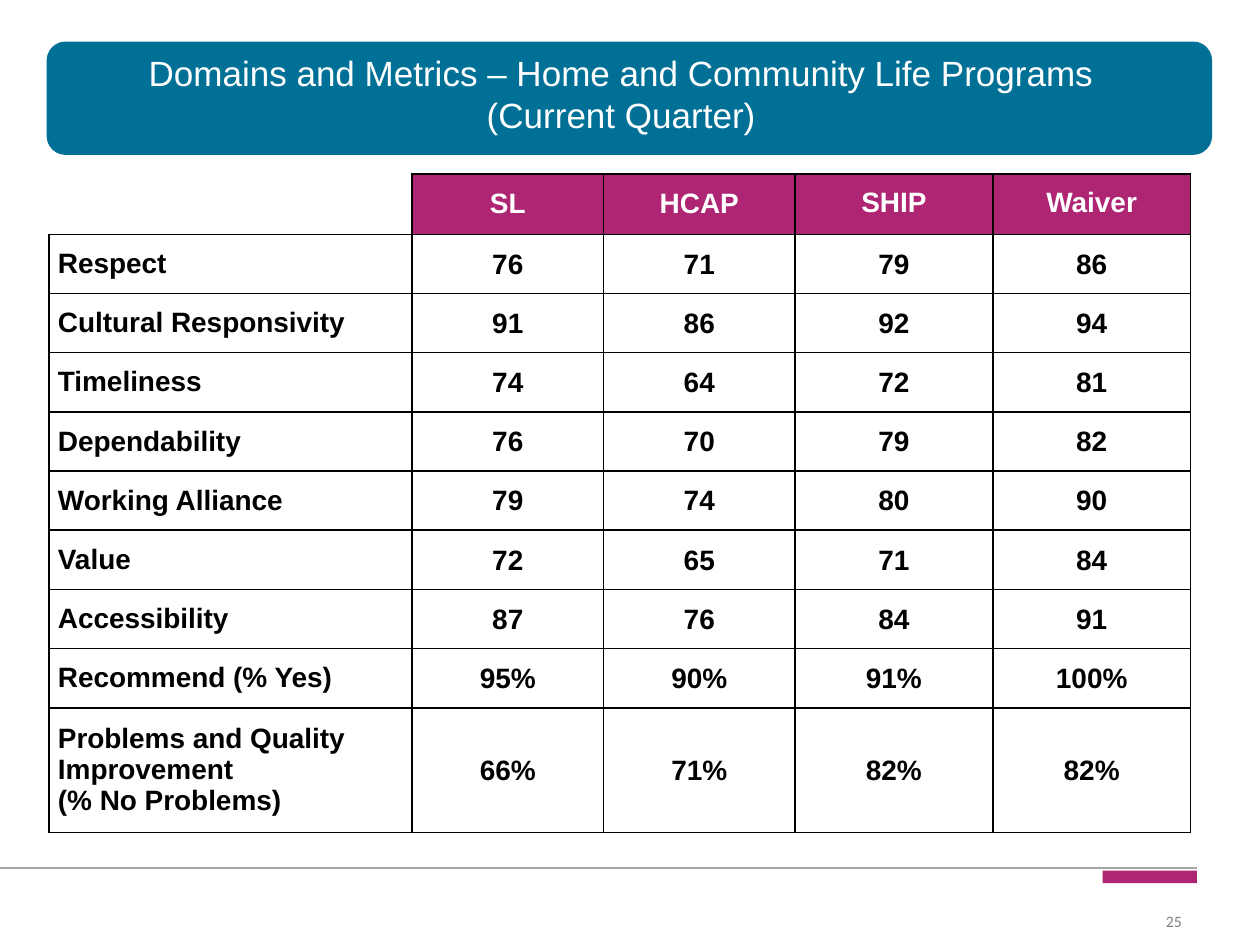
import pptx
import pptx.util
import pptx.dml.color
import pptx.enum.shapes
import pptx.enum.text
import pptx.oxml.ns
import lxml.etree

Inches, Pt = pptx.util.Inches, pptx.util.Pt
RGBColor = pptx.dml.color.RGBColor
ALIGN, ANCHOR = pptx.enum.text.PP_ALIGN, pptx.enum.text.MSO_ANCHOR
SHAPE = pptx.enum.shapes.MSO_SHAPE
qn = pptx.oxml.ns.qn

TEAL = RGBColor(0x00, 0x70, 0x96)
MAGENTA = RGBColor(0xAE, 0x25, 0x73)
WHITE = RGBColor(0xFF, 0xFF, 0xFF)
BLACK = RGBColor(0x00, 0x00, 0x00)
RULE_GRAY = RGBColor(0xA6, 0xA6, 0xA6)
NUMBER_GRAY = RGBColor(0x7F, 0x7F, 0x7F)


def style_paragraph(para, font_name, size, color, align=ALIGN.LEFT, bold=False):
    para.alignment = align
    para.font.name = font_name
    para.font.size = Pt(size)
    para.font.color.rgb = color
    para.font.bold = bold


def set_borders(cell, visible_sides):
    """Border lines come before the fill in the cell properties."""
    properties = cell._tc.get_or_add_tcPr()
    for index, side in enumerate("LRTB"):
        line = lxml.etree.Element(qn("a:ln" + side), w=str(Pt(1)))
        if side in visible_sides:
            fill = lxml.etree.SubElement(line, qn("a:solidFill"))
            lxml.etree.SubElement(fill, qn("a:srgbClr"), val=str(BLACK))
        else:
            lxml.etree.SubElement(line, qn("a:noFill"))
        properties.insert(index, line)


deck = pptx.Presentation()
deck.slide_width, deck.slide_height = Inches(10), Inches(7.5)
page = deck.slides.add_slide(deck.slide_layouts[6])

# Title banner and footer accent
for kind, left, top, width, height, color in [
    (SHAPE.ROUNDED_RECTANGLE, 0.37, 0.33, 9.25, 0.9, TEAL),
    (SHAPE.RECTANGLE, 8.75, 6.91, 0.75, 0.1, MAGENTA),
]:
    bar = page.shapes.add_shape(kind, Inches(left), Inches(top), Inches(width), Inches(height))
    bar.shadow.inherit = False
    bar.fill.solid()
    bar.fill.fore_color.rgb = color
    bar.line.fill.background()

# Footer rule
rule = page.shapes.add_connector(
    pptx.enum.shapes.MSO_CONNECTOR.STRAIGHT, Inches(0), Inches(6.89), Inches(9.5), Inches(6.89))
rule.line.color.rgb = RULE_GRAY
rule.line.width = Pt(0.75)
lxml.etree.SubElement(rule._element.spPr, qn("a:effectLst"))

# Page number
number_box = page.shapes.add_textbox(Inches(5.73), Inches(7.16), Inches(3.77), Inches(0.3))
number_frame = number_box.text_frame
number_frame.word_wrap = True
number_frame.vertical_anchor = ANCHOR.MIDDLE
number_frame.margin_right = Inches(0.12)
number_frame.text = "25"
style_paragraph(number_frame.paragraphs[0], "Calibri", 9, NUMBER_GRAY, ALIGN.RIGHT)

# Title
title_box = page.shapes.add_textbox(Inches(0.92), Inches(0.36), Inches(8.02), Inches(0.58))
title_box.text_frame.word_wrap = True
title_box.text_frame.text = (
    "Domains and Metrics – Home and Community Life Programs (Current Quarter)")
style_paragraph(title_box.text_frame.paragraphs[0], "Arial", 20, WHITE, ALIGN.CENTER)

# Metrics table
METRICS = [
    ("", "SL", "HCAP", "SHIP", "Waiver"),
    ("Respect", "76", "71", "79", "86"),
    ("Cultural Responsivity", "91", "86", "92", "94"),
    ("Timeliness", "74", "64", "72", "81"),
    ("Dependability", "76", "70", "79", "82"),
    ("Working Alliance", "79", "74", "80", "90"),
    ("Value", "72", "65", "71", "84"),
    ("Accessibility", "87", "76", "84", "91"),
    ("Recommend (% Yes)", "95%", "90%", "91%", "100%"),
    ("Problems and Quality Improvement\n(% No Problems)", "66%", "71%", "82%", "82%"),
]
COLUMN_WIDTHS = [2.88, 1.52, 1.52, 1.57, 1.57]
ROW_HEIGHTS = [0.48] + [0.47] * 8 + [0.99]
HEADER_MARGINS = (0.07, 0.04, 0.07, 0.04)
WIDE_HEADER_MARGINS = (0.1, 0.05, 0.1, 0.05)
LABEL_MARGINS = (0.07, 0, 0, 0)
VALUE_MARGINS = (0.01, 0.01, 0.01, 0)

table = page.shapes.add_table(
    len(METRICS), len(COLUMN_WIDTHS), Inches(0.39), Inches(1.38),
    Inches(sum(COLUMN_WIDTHS)), Inches(sum(ROW_HEIGHTS))).table
table.first_row = table.horz_banding = False
for column, width in zip(table.columns, COLUMN_WIDTHS):
    column.width = Inches(width)
for row, height in zip(table.rows, ROW_HEIGHTS):
    row.height = Inches(height)

for row_index, texts in enumerate(METRICS):
    for column_index, text in enumerate(texts):
        is_header = row_index == 0 and column_index > 0
        is_exact = is_header and column_index > 2
        if is_header:
            margins = WIDE_HEADER_MARGINS if is_exact else HEADER_MARGINS
        else:
            margins = VALUE_MARGINS if column_index else LABEL_MARGINS

        cell = table.cell(row_index, column_index)
        cell.text = text
        cell.vertical_anchor = ANCHOR.MIDDLE
        (cell.margin_left, cell.margin_top,
         cell.margin_right, cell.margin_bottom) = map(Inches, margins)
        cell.fill.solid()
        cell.fill.fore_color.rgb = MAGENTA if is_header else WHITE
        set_borders(cell, "LRTB" if row_index or column_index else "RB")
        for para in cell.text_frame.paragraphs:
            style_paragraph(para, "Arial", 16, WHITE if is_header else BLACK,
                            ALIGN.CENTER if column_index else ALIGN.LEFT, bold=True)
            if is_exact:
                para.line_spacing = Pt(16.5)

deck.save("out.pptx")
